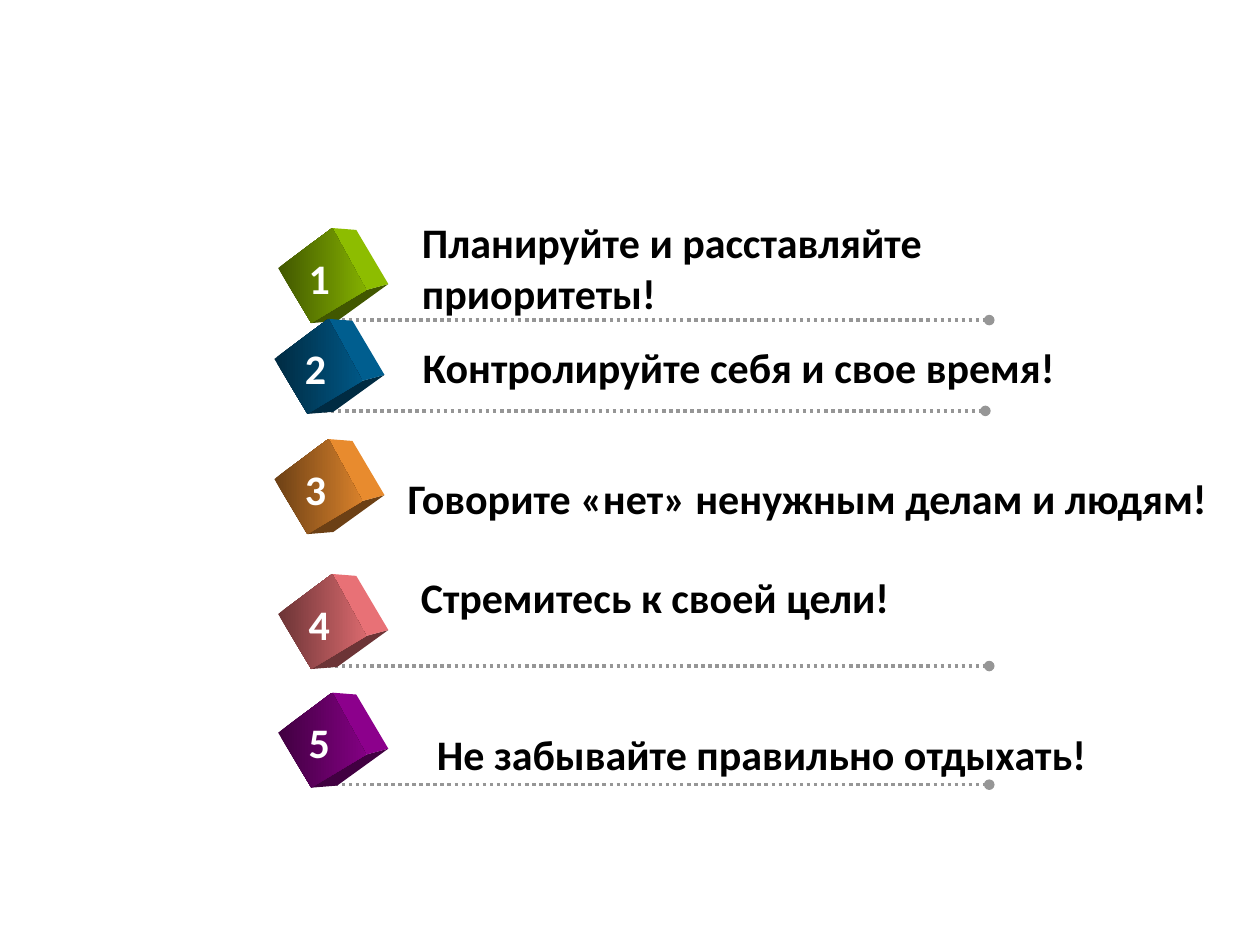
from lxml import etree
from pptx import Presentation
from pptx import util as u
from pptx.dml.color import RGBColor
from pptx.enum import dml, shapes, text
from pptx.oxml.ns import qn

COLORS = {"rule": "969696", "text": "000000", "number": "FFFFFF"}
FONT = "Calibri"

# Cube faces, in points from the cube's top left corner
FRONT = [(0, 22.9), (30.9, 0), (50.3, 35.4), (18.9, 54.3)]
SIDE = [(30.9, 0), (44.6, 1.1), (62.9, 32), (50.3, 35.4)]
BASE = [(18.9, 54.3), (50.3, 35.4), (62.9, 32), (33.7, 53.1)]

# Cube left, cube top, cube colour, has rule, text, text box (left, top, width, height), wrap
TIPS = [
    (159, 130.3, "92C300", True, "Планируйте и расставляйте приоритеты!",
     (234, 120.4, 378, 65.4), True),
    (156.8, 182.2, "006194", True, "Контролируйте себя и свое время!",
     (234.4, 191.8, 378.7, 36), False),
    (156.8, 250.9, "F09030", False, "Говорите «нет» ненужным делам и людям!",
     (225.8, 266.4, 475.9, 36), False),
    (159, 328, "F0757A", True, "Стремитесь к своей цели!",
     (233.4, 323.3, 371.4, 36), True),
    (159, 395.8, "910091", True, "Не забывайте правильно отдыхать!",
     (242.6, 412.6, 395.3, 36), False),
]


def shade(color, factor):
    """Darken a hex colour by a factor."""
    return "".join(f"{int(int(color[i:i + 2], 16) * factor):02X}" for i in (0, 2, 4))


def add_label(slide, words, box, color, wrap=False):
    shape = slide.shapes.add_textbox(*(u.Pt(length) for length in box))
    frame = shape.text_frame
    frame.word_wrap = wrap
    frame.auto_size = text.MSO_AUTO_SIZE.SHAPE_TO_FIT_TEXT
    run = frame.paragraphs[0].add_run()
    run.text = words
    run.font.name, run.font.size, run.font.bold = FONT, u.Pt(24), True
    run.font.color.rgb = RGBColor.from_string(color)


def add_face(slide, left, top, points):
    corners = [(u.Pt(left + x), u.Pt(top + y)) for x, y in points]
    builder = slide.shapes.build_freeform(*corners[0])
    builder.add_line_segments(corners[1:], close=True)
    shape = builder.convert_to_shape()
    shape.shadow.inherit = False
    shape.line.fill.background()
    return shape


def add_cube(slide, left, top, color):
    for points, factor in ((BASE, 0.45), (SIDE, 0.97)):
        face = add_face(slide, left, top, points)
        face.fill.solid()
        face.fill.fore_color.rgb = RGBColor.from_string(shade(color, factor))
    front = add_face(slide, left, top, FRONT)
    front.fill.gradient()
    front.fill.gradient_angle = 0
    for stop, factor in zip(front.fill.gradient_stops, (0.45, 0.9)):
        stop.color.rgb = RGBColor.from_string(shade(color, factor))


def add_rule(slide, left, y, width):
    rule = slide.shapes.add_connector(
        shapes.MSO_CONNECTOR.STRAIGHT, u.Pt(left), u.Pt(y), u.Pt(left + width), u.Pt(y))
    rule.line.color.rgb = RGBColor.from_string(COLORS["rule"])
    rule.line.width = u.Pt(2)
    rule.line.dash_style = dml.MSO_LINE.ROUND_DOT
    # Round end and no shadow
    properties = rule._element.spPr
    etree.SubElement(properties.find(qn("a:ln")), qn("a:tailEnd"), type="oval")
    etree.SubElement(properties, qn("a:effectLst"))


def main():
    presentation = Presentation()
    presentation.slide_width, presentation.slide_height = u.Pt(720), u.Pt(540)
    slide = presentation.slides.add_slide(presentation.slide_layouts[6])

    # Rule, numbered cube and advice for each tip
    for number, (left, top, color, has_rule, words, box, wrap) in enumerate(TIPS, 1):
        if has_rule:
            add_rule(slide, left + 28.3, top + 52.6, 378)
        add_cube(slide, left, top, color)
        add_label(slide, str(number), (left + 10.3, top + 10.2, 26.6, 36.7), COLORS["number"])
        add_label(slide, words, box, COLORS["text"], wrap)

    presentation.save("out.pptx")


if __name__ == "__main__":
    main()
